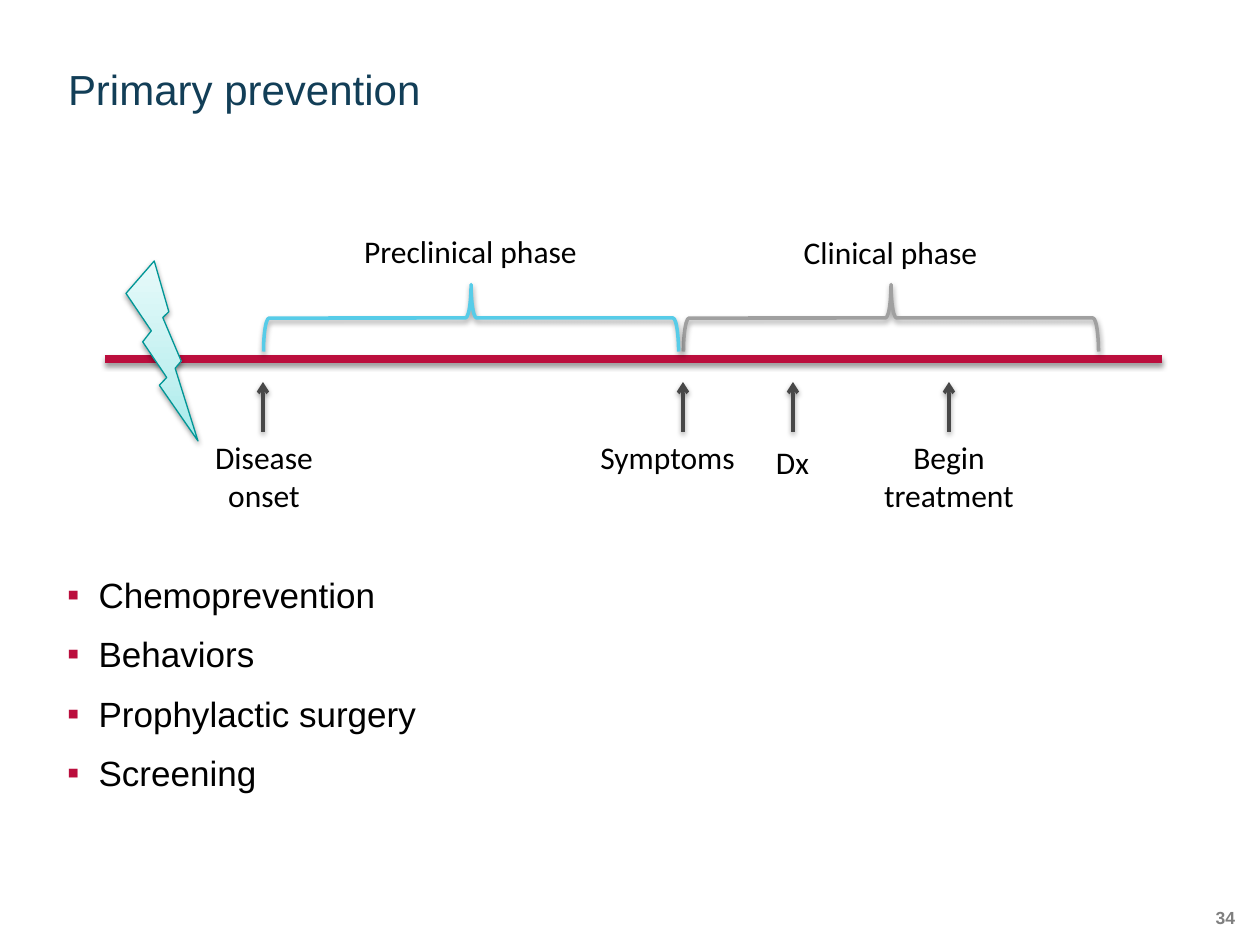
from copy import deepcopy

from pptx import Presentation
from pptx.dml.color import RGBColor
from pptx.enum.shapes import MSO_CONNECTOR, MSO_SHAPE
from pptx.enum.text import MSO_ANCHOR, PP_ALIGN
from pptx.oxml import parse_xml
from pptx.oxml.ns import nsdecls, qn
from pptx.util import Emu, Pt

PX_PER_INCH = 126
NAVY = RGBColor(0x12, 0x3E, 0x57)
CRIMSON = RGBColor(0xBB, 0x0E, 0x3D)
BLACK = RGBColor(0, 0, 0)
CHARCOAL = RGBColor(0x48, 0x48, 0x48)
GRAY = RGBColor(0xA0, 0xA0, 0xA0)
NUMBER_GRAY = RGBColor(0x7F, 0x7F, 0x7F)
SKY = RGBColor(0x57, 0xCC, 0xE8)
TEAL = RGBColor(0, 0x96, 0x96)
BOLT_STOPS = [
    (0, RGBColor(0xA5, 0xEB, 0xEB)),
    (0.35, RGBColor(0xC1, 0xF0, 0xF0)),
    (1, RGBColor(0xE7, 0xFA, 0xFA)),
]


def px(*lengths):
    return [Emu(round(length * 914400 / PX_PER_INCH)) for length in lengths]


def add_shadow(shape):
    """Give a shape or connector a soft shadow; call after its line is set."""
    properties = shape._element.spPr
    for effects in properties.findall(qn("a:effectLst")):
        properties.remove(effects)
    properties.append(parse_xml(
        f'<a:effectLst {nsdecls("a")}><a:outerShdw blurRad="39370" dist="20320" '
        'dir="5400000" rotWithShape="0"><a:srgbClr val="000000">'
        '<a:alpha val="38000"/></a:srgbClr></a:outerShdw></a:effectLst>'))


class SlideBuilder:
    heading_font = "Arial"
    label_font = "Calibri"

    def __init__(self, slide):
        self.slide = slide

    def add_text(self, paragraph, text, size, color, font, bold=False):
        run = paragraph.add_run()
        run.text = text
        run.font.name = font
        run.font.size = Pt(size)
        run.font.bold = bold
        run.font.color.rgb = color

    def strip_margins(self, frame):
        frame.margin_left = frame.margin_right = 0
        frame.margin_top = frame.margin_bottom = 0
        frame.word_wrap = True

    def title(self, text, left, top, width, height):
        shape = self.slide.shapes.title
        shape.left, shape.top, shape.width, shape.height = px(left, top, width, height)
        frame = shape.text_frame
        self.strip_margins(frame)
        frame.vertical_anchor = MSO_ANCHOR.BOTTOM
        paragraph = frame.paragraphs[0]
        paragraph.alignment = PP_ALIGN.LEFT
        paragraph.line_spacing = 0.9
        self.add_text(paragraph, text, 24, NAVY, self.heading_font)

    def page_number(self, text, left, top, width, height):
        frame = self.slide.shapes.add_textbox(*px(left, top, width, height)).text_frame
        self.strip_margins(frame)
        paragraph = frame.paragraphs[0]
        paragraph.alignment = PP_ALIGN.RIGHT
        self.add_text(paragraph, text, 10, NUMBER_GRAY, self.heading_font, bold=True)

    def bullets(self, items, left, top, width, height):
        frame = self.slide.shapes.add_textbox(*px(left, top, width, height)).text_frame
        self.strip_margins(frame)
        for index, item in enumerate(items):
            paragraph = frame.add_paragraph() if index else frame.paragraphs[0]
            properties = paragraph._p.get_or_add_pPr()
            properties.set("marL", "228600")
            properties.set("indent", "-228600")
            for xml in (
                f'<a:buClr {nsdecls("a")}><a:srgbClr val="{CRIMSON}"/></a:buClr>',
                f'<a:buFont {nsdecls("a")} typeface="{self.heading_font}"/>',
                f'<a:buChar {nsdecls("a")} char="▪"/>',
            ):
                properties.append(parse_xml(xml))
            paragraph.space_after = Pt(10)
            self.add_text(paragraph, item, 20, BLACK, self.heading_font)

    def label(self, text, left, top, width, height, alignment=PP_ALIGN.CENTER):
        frame = self.slide.shapes.add_textbox(*px(left, top, width, height)).text_frame
        frame.word_wrap = True
        paragraph = frame.paragraphs[0]
        paragraph.alignment = alignment
        self.add_text(paragraph, text, 18, BLACK, self.label_font)

    def line(self, start_x, start_y, end_x, end_y, color, weight, arrow=False):
        connector = self.slide.shapes.add_connector(
            MSO_CONNECTOR.STRAIGHT, *px(start_x, start_y, end_x, end_y))
        connector.line.color.rgb = color
        connector.line.width = Pt(weight)
        if arrow:
            connector._element.spPr.get_or_add_ln().append(
                parse_xml(f'<a:tailEnd {nsdecls("a")} type="arrow"/>'))
        add_shadow(connector)

    def brace(self, center_x, center_y, span, depth, color):
        """Draw a left brace turned so that its point faces up."""
        shape = self.slide.shapes.add_shape(
            MSO_SHAPE.LEFT_BRACE,
            *px(center_x - depth / 2, center_y - span / 2, depth, span))
        shape.rotation = 90
        shape.fill.background()
        shape.line.color.rgb = color
        shape.line.width = Pt(2)
        add_shadow(shape)

    def bolt(self, left, top, width, height):
        shape = self.slide.shapes.add_shape(
            MSO_SHAPE.LIGHTNING_BOLT, *px(left, top, width, height))
        shape.fill.gradient()
        shape.fill.gradient_angle = 90
        stop_list = shape._element.spPr.find(qn("a:gradFill")).find(qn("a:gsLst"))
        stop_list.insert(1, deepcopy(stop_list[0]))
        for stop, (position, color) in zip(shape.fill.gradient_stops, BOLT_STOPS):
            stop.position = position
            stop.color.rgb = color
        shape.line.color.rgb = TEAL
        shape.line.width = Pt(0.75)
        add_shadow(shape)


def main():
    presentation = Presentation()
    presentation.slide_width, presentation.slide_height = px(1260, 945)
    slide = presentation.slides.add_slide(presentation.slide_layouts[5])
    builder = SlideBuilder(slide)

    builder.page_number("34", 1192, 907, 43, 25)
    builder.title("Primary prevention", 68, 57, 1125, 58)
    builder.bullets(
        ["Chemoprevention", "Behaviors", "Prophylactic surgery", "Screening"],
        67, 573, 1125, 285)

    builder.line(105, 359, 1162, 359, CRIMSON, 4.5)
    builder.label("Disease onset", 198, 432, 132, 89)
    builder.label("Symptoms", 588, 432, 180, 50, PP_ALIGN.LEFT)
    builder.label("Begin treatment", 859, 432, 180, 89)
    builder.label("Dx", 747, 437, 91, 50)
    for event_x in (263, 683, 793, 949):
        builder.line(event_x, 432, event_x, 382, CHARCOAL, 2, arrow=True)

    for text, center_x, label_top, color in (
        ("Clinical phase", 891, 227, GRAY),
        ("Preclinical phase", 471, 226, SKY),
    ):
        builder.brace(center_x, 318, 415, 67, color)
        builder.label(text, center_x - 170, label_top, 339, 50)
    builder.bolt(126, 261, 72, 180)

    presentation.save("out.pptx")


if __name__ == "__main__":
    main()
